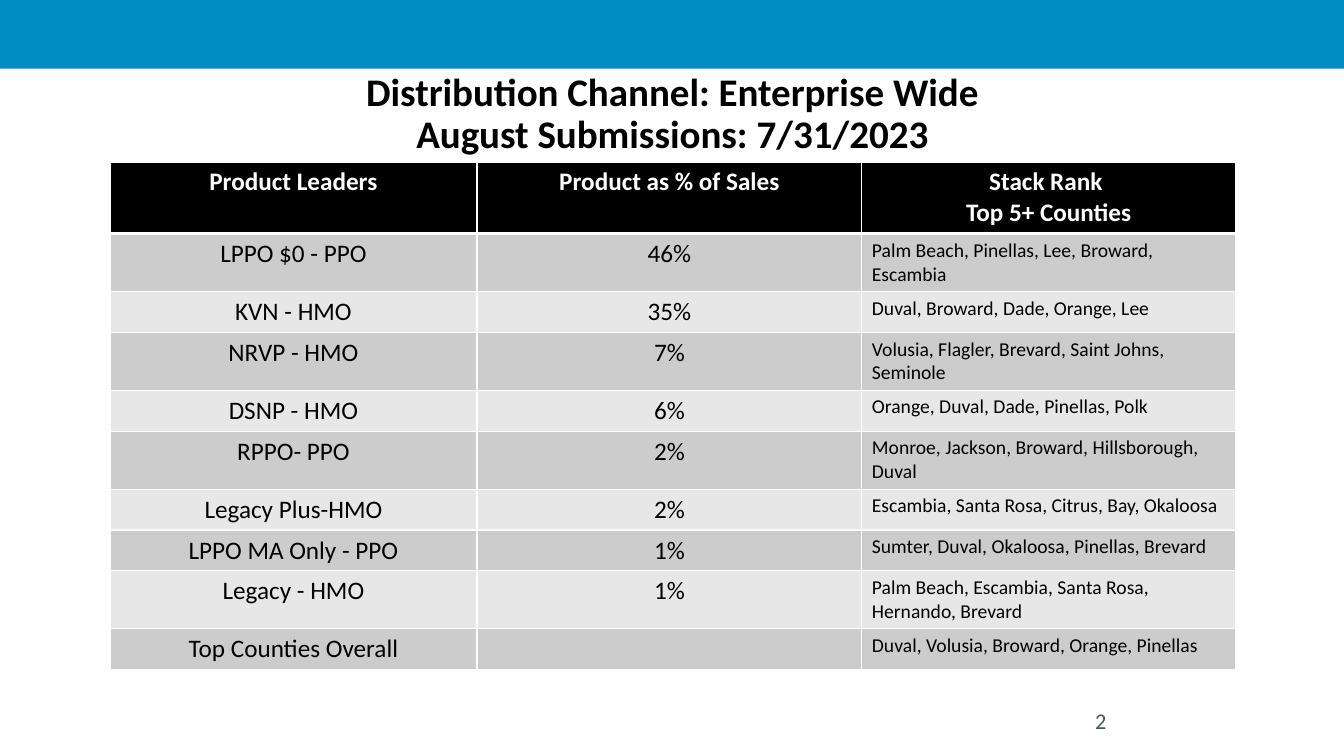
from dataclasses import dataclass
from lxml.etree import SubElement
from pptx import Presentation
from pptx.dml.color import RGBColor
from pptx.enum.shapes import MSO_SHAPE
from pptx.enum.text import MSO_ANCHOR, MSO_AUTO_SIZE, PP_ALIGN
from pptx.oxml.ns import qn
from pptx.util import Cm, Pt


@dataclass(frozen=True)
class Theme:
    font: str = "Calibri"
    blue: str = "008DC4"
    slate: str = "44546A"
    black: str = "000000"
    white: str = "FFFFFF"
    bands: tuple = ("CCCCCC", "E7E7E7")
    title: float = 27.9
    body: float = 18
    page: float = 16
    small: float = 14


THEME = Theme()
WIDTH, HEIGHT = 33.87, 19.05
COLUMNS = (9.25, 9.7, 9.42)
HEAD_ROW, TALL_ROW, SHORT_ROW = 1.8, 1.46, 1.03
WRAP_LIMIT = 43

HEADER = ("Product Leaders", "Product as % of Sales", "Stack Rank \nTop 5+ Counties")
LEADERS = (
    ("LPPO $0 - PPO", "46%", "Palm Beach, Pinellas, Lee, Broward, Escambia"),
    ("KVN - HMO", "35%", "Duval, Broward, Dade, Orange, Lee"),
    ("NRVP - HMO", "7%", "Volusia, Flagler, Brevard, Saint Johns, Seminole"),
    ("DSNP - HMO", "6%", "Orange, Duval, Dade, Pinellas, Polk"),
    ("RPPO- PPO", "2%", "Monroe, Jackson, Broward, Hillsborough, Duval"),
    ("Legacy Plus-HMO", "2%", "Escambia, Santa Rosa, Citrus, Bay, Okaloosa"),
    ("LPPO MA Only - PPO", "1%", "Sumter, Duval, Okaloosa, Pinellas, Brevard"),
    ("Legacy - HMO", "1%", "Palm Beach, Escambia, Santa Rosa, Hernando, Brevard"),
    ("Top Counties Overall", "", "Duval, Volusia, Broward, Orange, Pinellas"),
)


def color(code):
    return RGBColor.from_string(code)


def write(frame, text, size=THEME.body, ink=THEME.black, bold=False,
          align=PP_ALIGN.CENTER, anchor=MSO_ANCHOR.TOP, spacing=None):
    frame.word_wrap = True
    frame.vertical_anchor = anchor
    for index, line in enumerate(text.split("\n")):
        para = frame.add_paragraph() if index else frame.paragraphs[0]
        para.text = line
        para.alignment = align
        para.line_spacing = spacing
        for run in para.runs:
            run.font.name = THEME.font
            run.font.size = Pt(size)
            run.font.bold = bold
            run.font.color.rgb = color(ink)


def draw_band(slide, left, top, width, height):
    band = slide.shapes.add_shape(
        MSO_SHAPE.RECTANGLE, Cm(left), Cm(top), Cm(width), Cm(height))
    band.shadow.inherit = False
    band.fill.solid()
    band.fill.fore_color.rgb = color(THEME.blue)
    band.line.fill.background()


def draw_title(slide, left, top, width, height):
    title = slide.shapes.title
    title.left, title.top = Cm(left), Cm(top)
    title.width, title.height = Cm(width), Cm(height)
    title.text_frame.auto_size = MSO_AUTO_SIZE.NONE
    write(title.text_frame,
          "Distribution Channel: Enterprise Wide\vAugust Submissions: 7/31/2023",
          size=THEME.title, bold=True, anchor=MSO_ANCHOR.BOTTOM, spacing=0.9)


def draw_page(slide, left, top, width, height):
    box = slide.shapes.add_textbox(Cm(left), Cm(top), Cm(width), Cm(height))
    write(box.text_frame, "2", size=THEME.page, ink=THEME.slate,
          anchor=MSO_ANCHOR.MIDDLE)


def edge(cell, **widths):
    props = cell._tc.get_or_add_tcPr()
    for side in ("L", "R", "T", "B"):
        width = Pt(widths.get(side, 1))
        line = SubElement(props, qn(f"a:ln{side}"), w=str(width))
        fill = SubElement(line, qn("a:solidFill"))
        SubElement(fill, qn("a:srgbClr"), val=THEME.white)


def paint(cell, fill):
    cell.fill.solid()
    cell.fill.fore_color.rgb = color(fill)


def draw_table(slide, left, top, width):
    heights = [HEAD_ROW] + [
        TALL_ROW if len(row[2]) > WRAP_LIMIT else SHORT_ROW for row in LEADERS]
    grid = slide.shapes.add_table(
        len(heights), len(COLUMNS), Cm(left), Cm(top), Cm(width),
        Cm(sum(heights))).table
    for column, share in zip(grid.columns, COLUMNS):
        column.width = Cm(width * share / sum(COLUMNS))
    for row, height in zip(grid.rows, heights):
        row.height = Cm(height)
    for col, text in enumerate(HEADER):
        cell = grid.cell(0, col)
        write(cell.text_frame, text, ink=THEME.white, bold=True)
        edge(cell, B=3)
        paint(cell, THEME.black)
    for index, row in enumerate(LEADERS):
        for col, text in enumerate(row):
            cell = grid.cell(index + 1, col)
            if col == 2:
                write(cell.text_frame, text, size=THEME.small, align=PP_ALIGN.LEFT)
            else:
                write(cell.text_frame, text)
            edge(cell, T=1 if index else 3)
            paint(cell, THEME.bands[index % 2])


def main():
    deck = Presentation()
    deck.slide_width, deck.slide_height = Cm(WIDTH), Cm(HEIGHT)
    slide = deck.slides.add_slide(deck.slide_layouts[5])
    draw_band(slide, 0, 0, WIDTH, 1.73)
    draw_title(slide, 2.77, 1.75, 28.35, 2.34)
    draw_table(slide, 2.77, 4.08, 28.37)
    draw_page(slide, 23.93, 17.65, 7.62, 1.02)
    deck.save("out.pptx")


if __name__ == "__main__":
    main()
